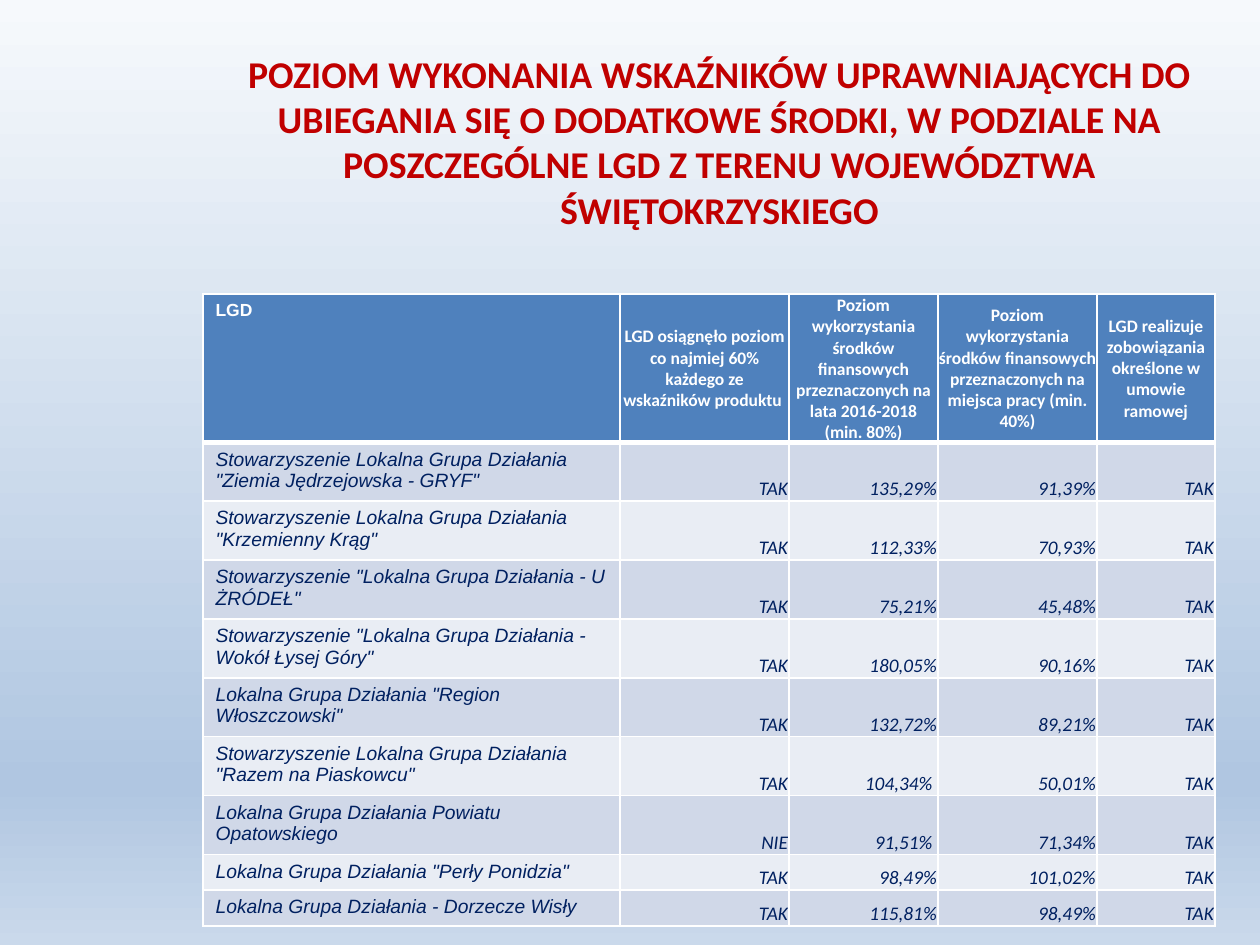
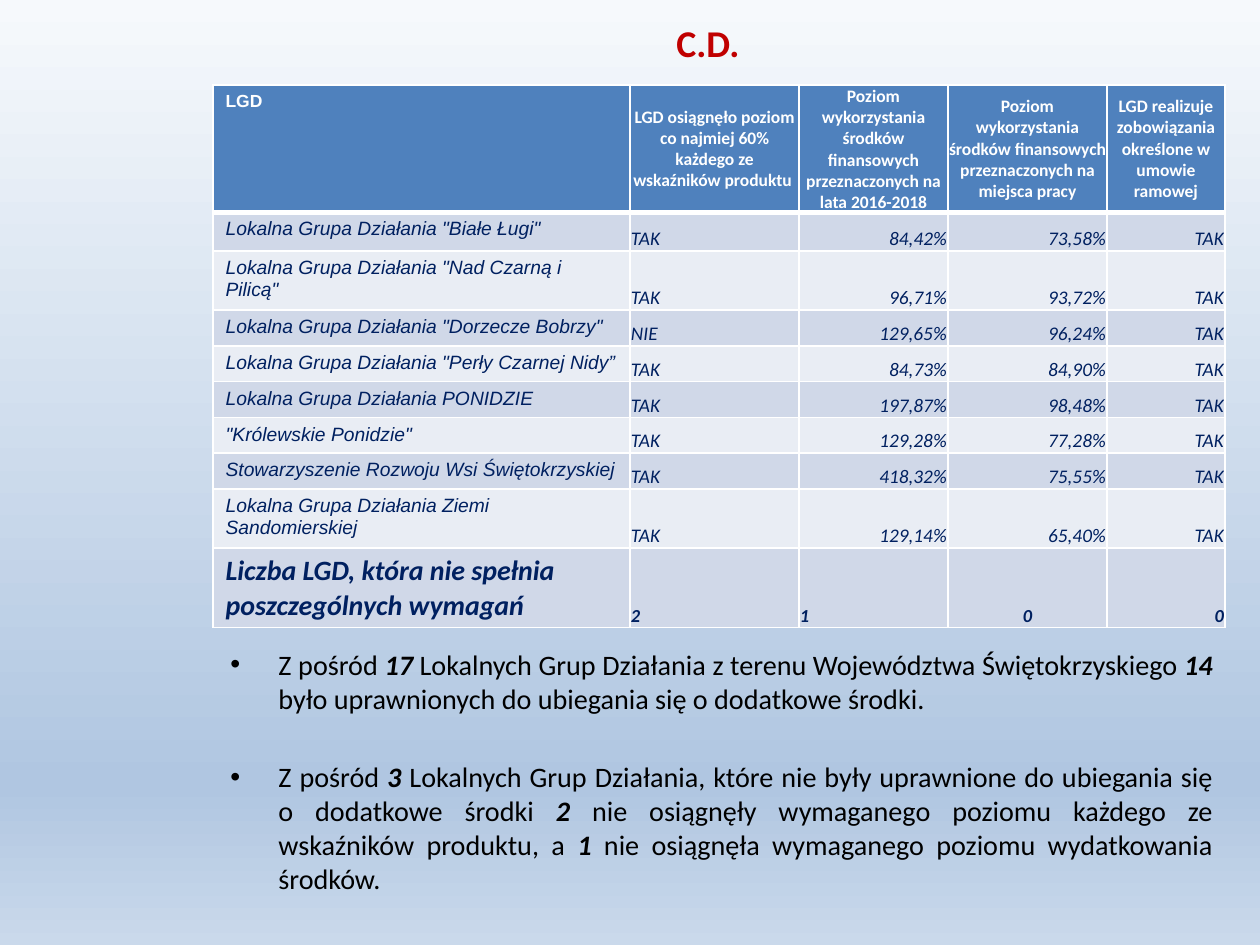
from lxml.etree import SubElement
from pptx import Presentation
from pptx.dml.color import RGBColor
from pptx.enum.text import MSO_ANCHOR, PP_ALIGN
from pptx.oxml.ns import qn
from pptx.util import Pt

SCALE = 914400 // 126
NAVY, RED, WHITE, BLACK = "002060", "C00000", "FFFFFF", "000000"
HEADER_FILL, BANDS = "4F81BD", ("E9EDF4", "D0D8E8")
BACKGROUND_STOPS = ((0, "F6F9FC"), (83, "B0C6E1"), (100, "CAD9EB"))
COLUMN_WIDTHS = (417, 169, 149, 159, 118)
ROW_HEIGHTS = [110, 39] + [30] * 8
LEFT, CENTER, RIGHT = PP_ALIGN.LEFT, PP_ALIGN.CENTER, PP_ALIGN.RIGHT


def px(length):
    return length * SCALE


def style(paragraph, size, color, font="Calibri", bold=False, italic=False, align=LEFT):
    paragraph.alignment = align
    for run in paragraph.runs:
        run.font.size = Pt(size)
        run.font.name = font
        run.font.bold = bold
        run.font.italic = italic
        run.font.color.rgb = RGBColor.from_string(color)


FUNDS = "Poziom wykorzystania środków finansowych przeznaczonych na "
INDICATORS = "LGD osiągnęło poziom co najmiej 60% każdego ze wskaźników produktu "
COMMITMENTS = "LGD realizuje zobowiązania określone w umowie ramowej"

pages = [
    {
        "title": "POZIOM WYKONANIA WSKAŹNIKÓW UPRAWNIAJĄCYCH DO UBIEGANIA SIĘ O DODATKOWE "
                 "ŚRODKI, W PODZIALE NA POSZCZEGÓLNE LGD Z TERENU WOJEWÓDZTWA ŚWIĘTOKRZYSKIEGO",
        "title_box": (179, 50, 1081, 182),
        "table_at": (203, 294),
        "indicator_align": RIGHT,
        "rows": [
            ("LGD", INDICATORS, FUNDS + "lata 2016-2018\n(min. 80%)",
             FUNDS + "miejsca pracy (min. 40%)", COMMITMENTS),
            ('Stowarzyszenie Lokalna Grupa Działania "Ziemia Jędrzejowska - GRYF"',
             "TAK", "135,29%", "91,39%", "TAK"),
            ('Stowarzyszenie Lokalna Grupa Działania "Krzemienny Krąg"',
             "TAK", "112,33%", "70,93%", "TAK"),
            ('Stowarzyszenie "Lokalna Grupa Działania - U ŻRÓDEŁ"',
             "TAK", "75,21%", "45,48%", "TAK"),
            ('Stowarzyszenie "Lokalna Grupa Działania - Wokół Łysej Góry"',
             "TAK", "180,05%", "90,16%", "TAK"),
            ('Lokalna Grupa Działania "Region Włoszczowski"',
             "TAK", "132,72%", "89,21%", "TAK"),
            ('Stowarzyszenie Lokalna Grupa Działania "Razem na Piaskowcu"',
             "TAK", "104,34% ", "50,01%", "TAK"),
            ("Lokalna Grupa Działania Powiatu Opatowskiego",
             "NIE", "91,51% ", "71,34%", "TAK"),
            ('Lokalna Grupa Działania "Perły Ponidzia"',
             "TAK", "98,49%", "101,02%", "TAK"),
            ("Lokalna Grupa Działania - Dorzecze Wisły",
             "TAK", "115,81%", "98,49%", "TAK"),
        ],
    },
    {
        "title": "C.D.",
        "title_box": (167, 7, 1082, 70),
        "table_at": (213, 85),
        "indicator_align": LEFT,
        "rows": [
            ("LGD", INDICATORS, FUNDS + "lata 2016-2018", FUNDS + "miejsca pracy", COMMITMENTS),
            ('Lokalna Grupa Działania "Białe Ługi"', "TAK", "84,42%", "73,58%", "TAK"),
            ('Lokalna Grupa Działania "Nad Czarną i Pilicą"', "TAK", "96,71%", "93,72%", "TAK"),
            ('Lokalna Grupa Działania "Dorzecze Bobrzy"', "NIE", "129,65%", "96,24%", "TAK"),
            ('Lokalna Grupa Działania "Perły Czarnej Nidy”', "TAK", "84,73%", "84,90%", "TAK"),
            ("Lokalna Grupa Działania PONIDZIE", "TAK", "197,87%", "98,48%", "TAK"),
            ('"Królewskie Ponidzie"', "TAK", "129,28%", "77,28%", "TAK"),
            ("Stowarzyszenie Rozwoju Wsi Świętokrzyskiej", "TAK", "418,32%", "75,55%", "TAK"),
            ("Lokalna Grupa Działania Ziemi Sandomierskiej", "TAK", "129,14%", "65,40%", "TAK"),
            ("Liczba LGD, która nie spełnia poszczególnych wymagań", "2", "1", "0", "0"),
        ],
    },
]

conclusions = [
    ("Z pośród ", "17", " Lokalnych Grup Działania z terenu Województwa Świętokrzyskiego ",
     "14", " było uprawnionych do ubiegania się o dodatkowe środki."),
    ("Z pośród ", "3", " Lokalnych Grup Działania, które nie były uprawnione do ubiegania się "
     "o dodatkowe środki ", "2", " nie osiągnęły wymaganego poziomu każdego ze wskaźników "
     "produktu, a ", "1", " nie osiągnęła wymaganego poziomu wydatkowania środków."),
]

presentation = Presentation()
presentation.slide_width, presentation.slide_height = px(1260), px(945)

master = presentation.slide_master
master.background.fill.gradient()
gradient = master.element.find(".//" + qn("p:bgPr")).find(qn("a:gradFill"))
for child in list(gradient):
    gradient.remove(child)
stop_list = SubElement(gradient, qn("a:gsLst"))
for position, color in BACKGROUND_STOPS:
    stop = SubElement(stop_list, qn("a:gs"), pos=str(position * 1000))
    SubElement(stop, qn("a:srgbClr"), val=color)
SubElement(gradient, qn("a:lin"), ang="5400000", scaled="0")

for page in pages:
    slide = presentation.slides.add_slide(presentation.slide_layouts[6])
    title = slide.shapes.add_textbox(*map(px, page["title_box"])).text_frame
    title.word_wrap = True
    title.vertical_anchor = MSO_ANCHOR.MIDDLE
    title.text = page["title"]
    style(title.paragraphs[0], 21.6, RED, bold=True, align=CENTER)

    rows = page["rows"]
    left, top = page["table_at"]
    table = slide.shapes.add_table(
        len(rows), len(COLUMN_WIDTHS), px(left), px(top),
        px(sum(COLUMN_WIDTHS)), px(sum(ROW_HEIGHTS))).table
    for column, width in zip(table.columns, COLUMN_WIDTHS):
        column.width = px(width)
    for row, height in zip(table.rows, ROW_HEIGHTS):
        row.height = px(height)

    for row_index, values in enumerate(rows):
        is_header = row_index == 0
        is_total = values[0].startswith("Liczba")
        aligns = [LEFT, page["indicator_align"], RIGHT, RIGHT, RIGHT]
        if is_header:
            aligns = [LEFT] + [CENTER] * 4
        elif is_total:
            aligns = [LEFT, LEFT, LEFT, CENTER, RIGHT]
        for column_index, value in enumerate(values):
            is_name = column_index == 0
            cell = table.cell(row_index, column_index)
            cell.text_frame.text = value
            if not is_name:
                cell.vertical_anchor = MSO_ANCHOR.MIDDLE if is_header else MSO_ANCHOR.BOTTOM
                cell.margin_left = cell.margin_right = cell.margin_top = px(1)
                cell.margin_bottom = 0
            properties = cell._tc.get_or_add_tcPr()
            for side in ("lnL", "lnR", "lnT", "lnB"):
                is_thick = (row_index, side) in ((0, "lnB"), (1, "lnT"))
                line = SubElement(properties, qn("a:" + side), w=str(Pt(3 if is_thick else 1)))
                line_fill = SubElement(line, qn("a:solidFill"))
                SubElement(line_fill, qn("a:srgbClr"), val=WHITE)
            cell.fill.solid()
            cell.fill.fore_color.rgb = RGBColor.from_string(
                HEADER_FILL if is_header else BANDS[row_index % 2])
            size = 10 if is_header else 11
            if is_total:
                size = 16 if is_name else 10.5
            for paragraph in cell.text_frame.paragraphs:
                style(paragraph, size, WHITE if is_header else NAVY,
                      font="Arial" if is_name and not is_total else "Calibri",
                      bold=is_header or is_total, italic=not is_header,
                      align=aligns[column_index])

body = slide.shapes.add_textbox(px(218), px(641), px(1007), px(260)).text_frame
body.word_wrap = True
for index, parts in enumerate(conclusions):
    paragraph = body.paragraphs[0] if index == 0 else body.add_paragraph()
    properties = paragraph._p.get_or_add_pPr()
    properties.set("marL", str(px(48)))
    properties.set("indent", str(px(-48)))
    SubElement(properties, qn("a:buFont"), typeface="Arial")
    SubElement(properties, qn("a:buChar"), char="•")
    if index:
        paragraph.space_before = Pt(25.5)
    for part in parts:
        paragraph.add_run().text = part
    style(paragraph, 16.1, BLACK, align=PP_ALIGN.JUSTIFY)
    for run in paragraph.runs[1::2]:
        run.font.bold = run.font.italic = True

presentation.save("out.pptx")
